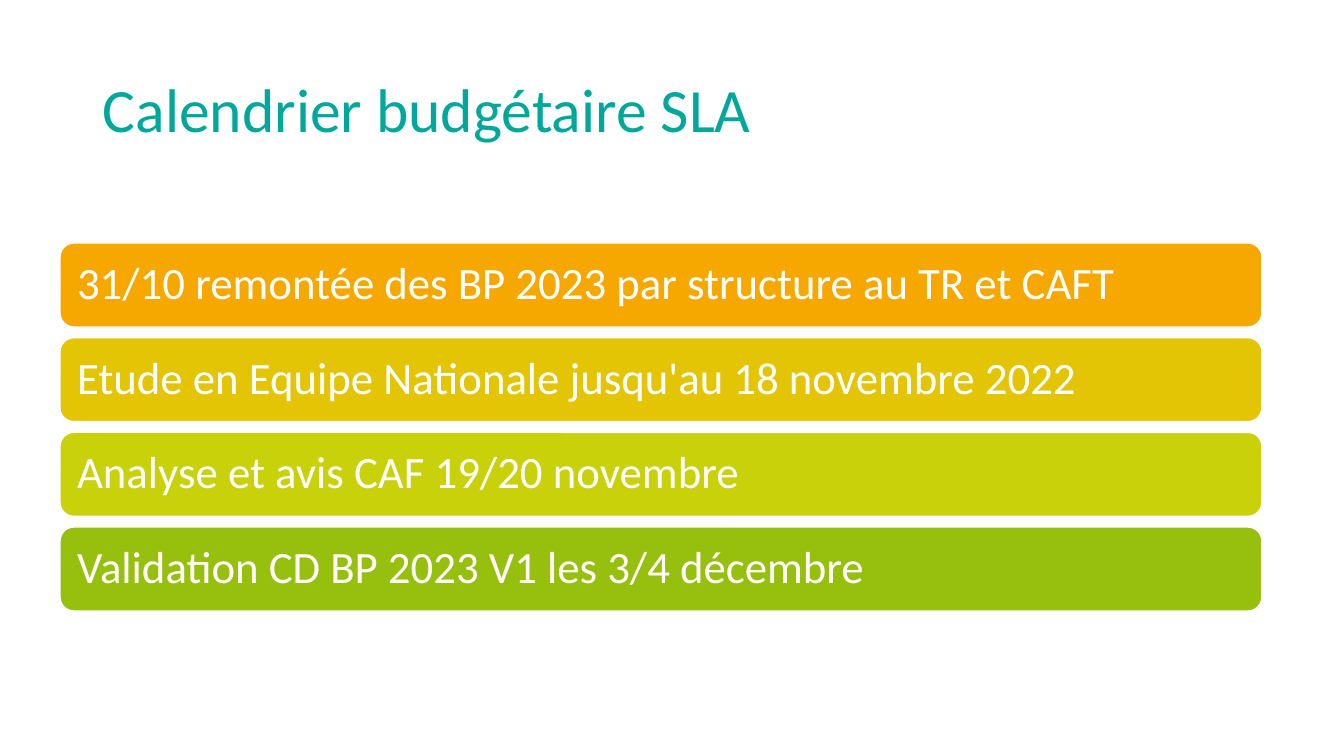
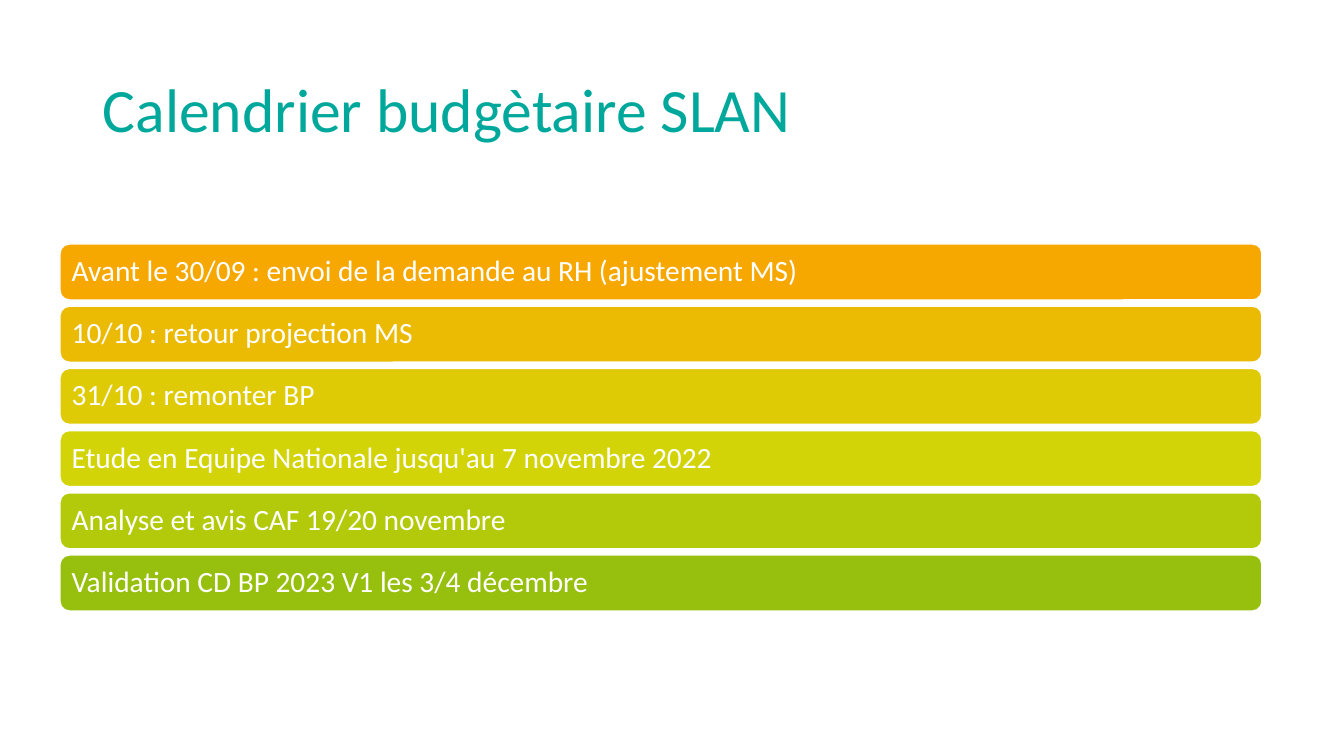
from pptx import Presentation
from pptx import util as u
from pptx.dml.color import RGBColor
from pptx.enum import shapes, text

EMU_PER_PX = 914400 / 100.8
FONT = "Calibri"
TEAL, WHITE = "00A89C", "FFFFFF"
BARS_LEFT, BARS_WIDTH, BARS_BOTTOM = 60, 1202, 611


def px(length):
    return u.Emu(round(length * EMU_PER_PX))


def write(frame, wording, size, color):
    frame.word_wrap = True
    frame.vertical_anchor = text.MSO_ANCHOR.MIDDLE
    line = frame.paragraphs[0]
    line.text = wording
    line.alignment = text.PP_ALIGN.LEFT
    line.line_spacing = 0.9
    line.font.name = FONT
    line.font.size = u.Pt(size)
    line.font.color.rgb = RGBColor.from_string(color)


# Each calendar: its title, the measures of its bars, and its steps in order
calendars = [
    {
        "title": "Calendrier budgétaire SLA",
        "top": 243, "height": 84, "inset": 13, "size": 32,
        "steps": [
            ("31/10 remontée des BP 2023 par structure au TR et CAFT", "F6A800"),
            ("Etude en Equipe Nationale jusqu'au 18 novembre 2022", "E3C505"),
            ("Analyse et avis CAF 19/20 novembre", "C8D109"),
            ("Validation CD BP 2023 V1 les 3/4 décembre", "97BF0D"),
        ],
    },
    {
        "title": "Calendrier budgètaire SLAN",
        "top": 244, "height": 56, "inset": 9, "size": 21,
        "steps": [
            ("Avant le 30/09 : envoi de la demande au RH (ajustement MS)", "F6A800"),
            ("10/10 : retour projection MS", "EBBA03"),
            ("31/10 : remonter BP", "DFCA06"),
            ("Etude en Equipe Nationale jusqu'au 7 novembre 2022", "D3D408"),
            ("Analyse et avis CAF 19/20 novembre", "B3CA0B"),
            ("Validation CD BP 2023 V1 les 3/4 décembre", "97BF0D"),
        ],
    },
]

deck = Presentation()
deck.slide_width, deck.slide_height = px(1344), px(756)

for calendar in calendars:
    slide = deck.slides.add_slide(deck.slide_layouts[6])

    # Title
    title = slide.shapes.add_textbox(px(93), px(40), px(1159), px(146))
    write(title.text_frame, calendar["title"], 44, TEAL)

    # Step bars, evenly spread down to the common bottom edge
    top, height, steps = calendar["top"], calendar["height"], calendar["steps"]
    pitch = (BARS_BOTTOM - top - height) / (len(steps) - 1)
    for row, (wording, color) in enumerate(steps):
        step = slide.shapes.add_shape(
            shapes.MSO_SHAPE.ROUNDED_RECTANGLE,
            px(BARS_LEFT), px(top + row * pitch), px(BARS_WIDTH), px(height))
        step.shadow.inherit = False
        step.fill.solid()
        step.fill.fore_color.rgb = RGBColor.from_string(color)
        step.line.color.rgb = RGBColor.from_string(WHITE)
        step.line.width = u.Pt(1)
        frame = step.text_frame
        frame.margin_left = frame.margin_right = px(calendar["inset"])
        frame.margin_top = frame.margin_bottom = px(calendar["inset"])
        write(frame, wording, calendar["size"], WHITE)

deck.save("out.pptx")
